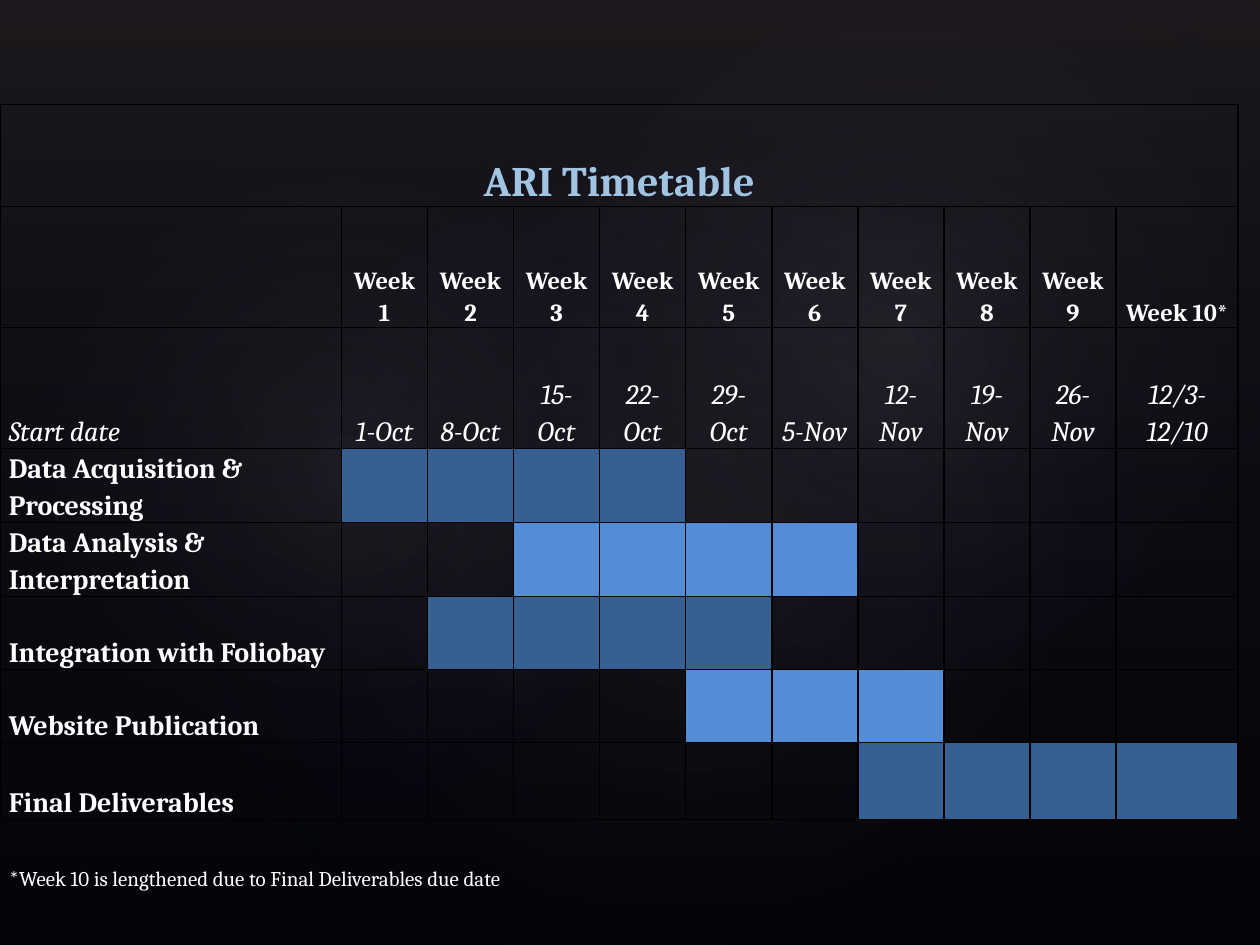
from lxml import etree
from pptx import Presentation
from pptx.dml.color import RGBColor
from pptx.enum.shapes import MSO_SHAPE
from pptx.enum.text import MSO_ANCHOR, PP_ALIGN
from pptx.oxml import parse_xml
from pptx.oxml.ns import nsdecls, qn
from pptx.util import Inches, Pt

BOTTOM = MSO_ANCHOR.BOTTOM
LEFT, CENTER = PP_ALIGN.LEFT, PP_ALIGN.CENTER
RECTANGLE, OVAL = MSO_SHAPE.RECTANGLE, MSO_SHAPE.OVAL

BLACK = RGBColor(0x00, 0x00, 0x00)
WHITE = RGBColor(0xFF, 0xFF, 0xFF)
PALE_BLUE = RGBColor(0xA1, 0xC4, 0xE3)
DARK_BLUE = RGBColor(0x36, 0x60, 0x92)
BRIGHT_BLUE = RGBColor(0x53, 0x8D, 0xD5)
PLUM = RGBColor(0x50, 0x46, 0x52)
NAVY = RGBColor(0x24, 0x28, 0x52)
LILAC = RGBColor(0xC4, 0xBC, 0xC6)

TITLE = "ARI Timetable"
DATES = ["1-Oct", "8-Oct", "15-Oct", "22-Oct", "29-Oct", "5-Nov",
         "12-Nov", "19-Nov", "26-Nov", "12/3-12/10"]
TASKS = [
    ("Data Acquisition & Processing", 1, 4, DARK_BLUE),
    ("Data Analysis & Interpretation", 3, 6, BRIGHT_BLUE),
    ("Integration with Foliobay", 2, 5, DARK_BLUE),
    ("Website Publication", 5, 7, BRIGHT_BLUE),
    ("Final Deliverables", 7, 10, DARK_BLUE),
]
FOOTNOTE = [("*", "Calibri"),
            ("Week 10 is lengthened due to Final Deliverables due date", "Cambria")]
GLOWS = [
    (1.5, 1.14, 7.92, 6.24, 328.7, 7),
    (-0.3, 1.28, 6.06, 4.9, 294.3, 8),
    (3.58, 0.13, 7.09, 5.2, 328.7, 8),
]
TABLE_WIDTH, TASK_WIDTH, LAST_WEEK_WIDTH = 9.83, 2.71, 0.97
WEEK_WIDTH = (TABLE_WIDTH - TASK_WIDTH - LAST_WEEK_WIDTH) / 9
COLUMN_WIDTHS = [TASK_WIDTH] + [WEEK_WIDTH] * 9 + [LAST_WEEK_WIDTH]
ROW_HEIGHTS = [0.81, 0.96, 0.96] + [0.58] * 4 + [0.61, 0.58]
LINEAR = '<a:lin ang="5400000" scaled="0"/>'
RADIAL = ('<a:path path="circle"><a:fillToRect l="50000" t="50000" '
          'r="50000" b="50000"/></a:path>')


def add_gradient_shape(page, kind, place, stops, direction, rotation=0):
    shape = page.shapes.add_shape(kind, *[Inches(value) for value in place])
    shape.rotation = rotation
    shape.shadow.inherit = False
    shape.line.fill.background()
    shape.fill.background()
    stop_xml = "".join(
        f'<a:gs pos="{position * 1000}"><a:srgbClr val="{color}">'
        f'<a:alpha val="{opacity * 1000}"/></a:srgbClr></a:gs>'
        for position, color, opacity in stops)
    gradient = parse_xml(
        f'<a:gradFill {nsdecls("a")} rotWithShape="1">'
        f'<a:gsLst>{stop_xml}</a:gsLst>{direction}</a:gradFill>')
    properties = shape._element.spPr
    properties.replace(properties.find(qn("a:noFill")), gradient)


def set_borders(cell, black_sides):
    properties = cell._tc.get_or_add_tcPr()
    for side in "LRTB":
        line = etree.SubElement(properties, qn(f"a:ln{side}"), w=str(Pt(1)))
        if side in black_sides:
            fill = etree.SubElement(line, qn("a:solidFill"))
            etree.SubElement(fill, qn("a:srgbClr"), val=str(BLACK))
        else:
            etree.SubElement(line, qn("a:noFill"))


def write(cell, parts, size, align=CENTER, bold=False, italic=False, color=WHITE):
    para = cell.text_frame.paragraphs[0]
    para.alignment = align
    para.line_spacing = 1.15
    for text, font_name in parts:
        span = para.add_run()
        span.text = text
        font = span.font
        font.name, font.size = font_name, Pt(size)
        font.bold, font.italic = bold, italic
        font.color.rgb = color


def add_timetable(page):
    frame = page.shapes.add_table(
        len(ROW_HEIGHTS), len(COLUMN_WIDTHS), Inches(0), Inches(0.83),
        Inches(TABLE_WIDTH), Inches(sum(ROW_HEIGHTS)))
    table = frame.table
    table.first_row = table.horz_banding = False
    for column, width in zip(table.columns, COLUMN_WIDTHS):
        column.width = Inches(width)
    for row, height in zip(table.rows, ROW_HEIGHTS):
        row.height = Inches(height)

    last_row, last_column = len(ROW_HEIGHTS) - 1, len(COLUMN_WIDTHS) - 1
    for row_index, row in enumerate(table.rows):
        for cell in row.cells:
            set_borders(cell, "T" if row_index == last_row else "LRTB")
            cell.fill.background()
            cell.vertical_anchor = BOTTOM
            cell.margin_left = cell.margin_right = Inches(0.07)
            cell.margin_top = cell.margin_bottom = 0
    for row_index in (0, last_row):
        table.cell(row_index, 0).merge(table.cell(row_index, last_column))

    write(table.cell(0, 0), [(TITLE, "Cambria")], 24, bold=True, color=PALE_BLUE)
    write(table.cell(2, 0), [("Start date", "Cambria")], 16, LEFT, italic=True)
    for week, date in enumerate(DATES, 1):
        label = f"Week {week}" + ("*" if week == len(DATES) else "")
        write(table.cell(1, week), [(label, "Cambria")], 14, bold=True)
        write(table.cell(2, week), [(date, "Cambria")], 16, italic=True)
    for row_index, (task, first, last, color) in enumerate(TASKS, 3):
        write(table.cell(row_index, 0), [(task, "Cambria")], 16, LEFT, bold=True)
        for week in range(first, last + 1):
            fill = table.cell(row_index, week).fill
            fill.solid()
            fill.fore_color.rgb = color
    write(table.cell(last_row, 0), FOOTNOTE, 12, LEFT)


def main():
    deck = Presentation()
    deck.slide_width, deck.slide_height = Inches(10), Inches(7.5)
    page = deck.slides.add_slide(deck.slide_layouts[6])
    page.background.fill.solid()
    page.background.fill.fore_color.rgb = BLACK
    add_gradient_shape(page, RECTANGLE, (0, 0, 10, 7.5),
                       [(0, PLUM, 36), (100, NAVY, 10)], LINEAR)
    for *place, rotation, opacity in GLOWS:
        add_gradient_shape(page, OVAL, place,
                           [(0, LILAC, opacity), (58, NAVY, 0)], RADIAL, rotation)
    add_timetable(page)
    deck.save("out.pptx")


if __name__ == "__main__":
    main()
